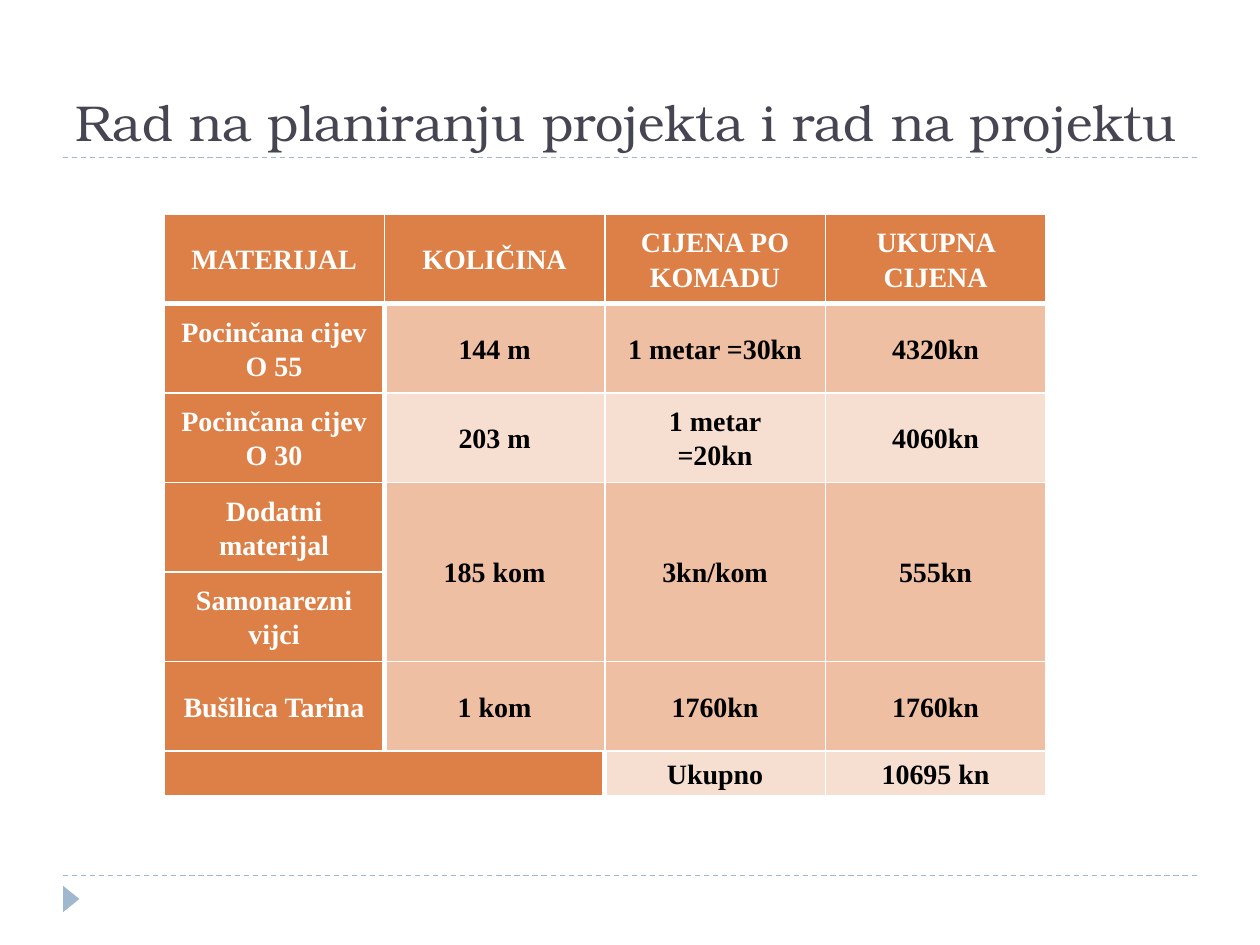
from lxml.etree import SubElement
from pptx import Presentation
from pptx.dml.color import RGBColor
from pptx.enum.dml import MSO_LINE
from pptx.enum.shapes import MSO_CONNECTOR, MSO_SHAPE
from pptx.enum.text import MSO_ANCHOR, PP_ALIGN
from pptx.oxml.ns import qn
from pptx.util import Inches, Pt

WHITE = RGBColor(0xFF, 0xFF, 0xFF)
BLACK = RGBColor(0, 0, 0)
SLATE = RGBColor(0x46, 0x46, 0x53)
BLUE = RGBColor(0x9F, 0xB8, 0xCD)
ORANGE = RGBColor(0xDD, 0x80, 0x47)
PEACH = RGBColor(0xEE, 0xBF, 0xA3)
CREAM = RGBColor(0xF6, 0xDF, 0xD1)

ROWS = [
    ["MATERIJAL", "KOLIČINA", "CIJENA PO KOMADU", "UKUPNA CIJENA"],
    ["Pocinčana cijev O 55", "144 m", "1 metar =30kn", "4320kn"],
    ["Pocinčana cijev O 30", "203 m", "1 metar\n=20kn", "4060kn"],
    ["Dodatni materijal", "185 kom", "3kn/kom", "555kn"],
    ["Samonarezni vijci", "", "", ""],
    ["Bušilica Tarina", "1 kom", "1760kn", "1760kn"],
    ["", "", "Ukupno", "10695 kn"],
]
ROW_HEIGHTS = [0.71] * 6 + [0.36]
LIGHT_ROWS = (2, 6)
TOTAL_ROW = len(ROWS) - 1


def add_run(p, text, font, size, color, bold=False):
    r = p.add_run()
    r.text = text
    r.font.name = font
    r.font.size = Pt(size)
    r.font.color.rgb = color
    r.font.bold = bold


def add_rule(slide, left, top, width):
    line = slide.shapes.add_connector(
        MSO_CONNECTOR.STRAIGHT, left, top, left + width, top)
    line.line.color.rgb = BLUE
    line.line.width = Pt(0.75)
    line.line.dash_style = MSO_LINE.DASH
    SubElement(line._element.spPr, qn("a:effectLst"))


def add_title(slide, left, top, width, height):
    tf = slide.shapes.add_textbox(left, top, width, height).text_frame
    tf.word_wrap = True
    tf.vertical_anchor = MSO_ANCHOR.BOTTOM
    add_run(tf.paragraphs[0], "Rad na planiranju projekta i rad na projektu",
            "TeX Gyre Bonum", 28.8, SLATE)
    add_rule(slide, left, top + height, width)


def add_footer(slide, left, top, width):
    add_rule(slide, left, top, width)
    sp = slide.shapes.add_shape(
        MSO_SHAPE.ISOSCELES_TRIANGLE, left - Inches(0.04), top + Inches(0.12),
        Inches(0.21), Inches(0.13))
    sp.rotation = 90
    sp.shadow.inherit = False
    sp.fill.solid()
    sp.fill.fore_color.rgb = BLUE
    sp.line.fill.background()


def set_borders(cell, **widths):
    """Draw white edges; widths are points keyed by L, R, T and B."""
    tc_pr = cell._tc.get_or_add_tcPr()
    for side, width in widths.items():
        ln = SubElement(tc_pr, qn(f"a:ln{side}"), w=str(Pt(width)))
        fill = SubElement(ln, qn("a:solidFill"))
        SubElement(fill, qn("a:srgbClr"), val=str(WHITE))


def is_label(row, col):
    return row == 0 or col == 0 or (row == TOTAL_ROW and col == 1)


def style_cell(cell, row, col):
    label_end = 1 if row == TOTAL_ROW else 0
    set_borders(cell,
                L=3 if row and col == label_end + 1 else 1,
                R=3 if row and col == label_end else 1,
                T=3 if row == 1 else 1,
                B=3 if row == 0 else 1)
    cell.fill.solid()
    cell.fill.fore_color.rgb = (
        ORANGE if is_label(row, col) else CREAM if row in LIGHT_ROWS else PEACH)
    cell.vertical_anchor = MSO_ANCHOR.MIDDLE
    cell.margin_left = cell.margin_right = Inches(0.07)
    cell.margin_top = cell.margin_bottom = 0


def write_cell(cell, text, color):
    p = cell.text_frame.paragraphs[0]
    p.alignment = PP_ALIGN.CENTER
    p.line_spacing = 1.1
    p.space_after = Pt(9)
    for i, part in enumerate(text.split("\n")):
        if i:
            p.add_line_break()
        add_run(p, part, "Times New Roman", 16, color, bold=True)


def add_cost_table(slide, left, top, width, height):
    cols = len(ROWS[0])
    table = slide.shapes.add_table(
        len(ROWS), cols, left, top, width, height).table
    for column in table.columns:
        column.width = width // cols
    for row, row_height in zip(table.rows, ROW_HEIGHTS):
        row.height = Inches(row_height)
    for i, texts in enumerate(ROWS):
        for j, text in enumerate(texts):
            cell = table.cell(i, j)
            style_cell(cell, i, j)
            if text:
                write_cell(cell, text, WHITE if is_label(i, j) else BLACK)
    for j in range(1, cols):
        table.cell(3, j).merge(table.cell(4, j))
    table.cell(TOTAL_ROW, 0).merge(table.cell(TOTAL_ROW, 1))


def main():
    prs = Presentation()
    prs.slide_width, prs.slide_height = Inches(10), Inches(7.5)
    slide = prs.slides.add_slide(prs.slide_layouts[6])
    add_title(slide, Inches(0.5), Inches(0.17), Inches(9), Inches(1.08))
    add_cost_table(slide, Inches(1.3), Inches(1.7), Inches(7), Inches(4.62))
    add_footer(slide, Inches(0.5), Inches(6.95), Inches(9))
    prs.save("out.pptx")


if __name__ == "__main__":
    main()
